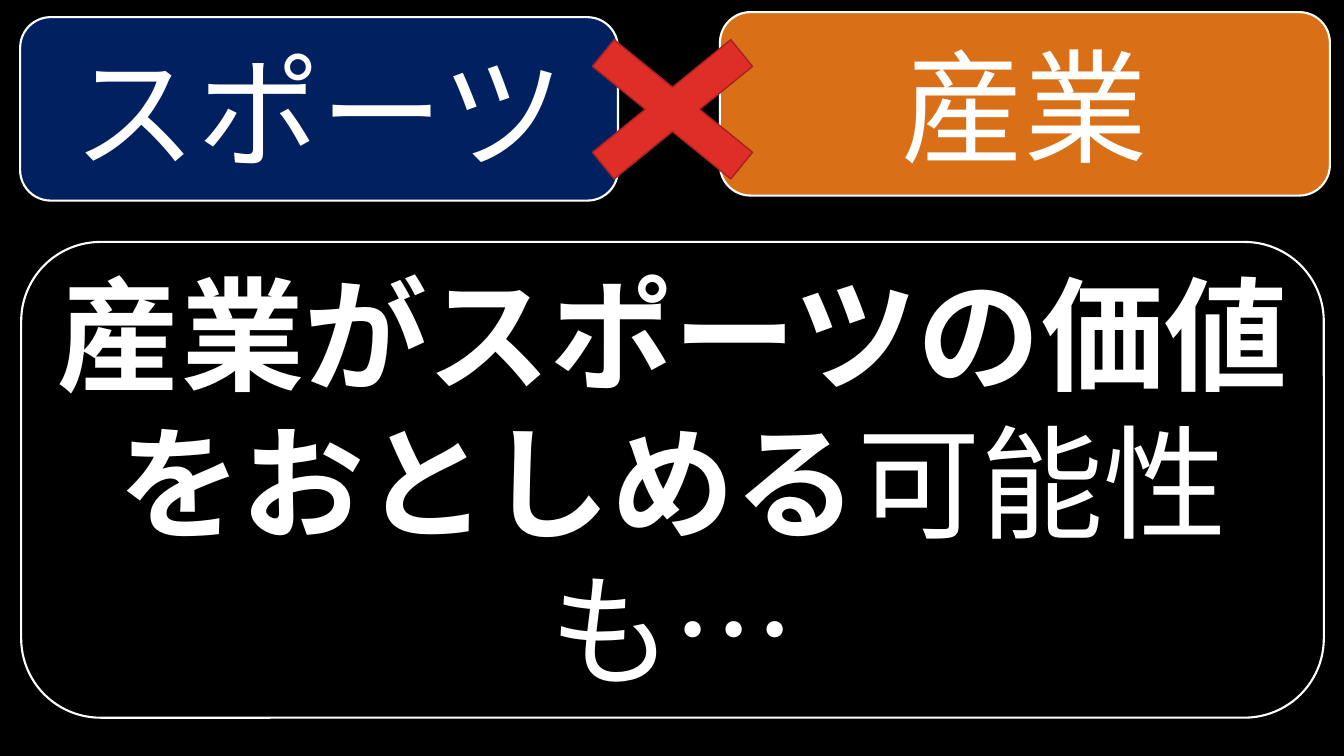
import pptx
import pptx.util
import pptx.dml.color
import pptx.enum.shapes
import pptx.enum.text

COLORS = {
    "black": "000000",
    "white": "FFFFFF",
    "navy": "002060",
    "orange": "D96F17",
    "red": "DF2E28",
    "dark_red": "A5221E",
}
FONT = "TeX Gyre Adventor"
WIDTH, HEIGHT = 13.33, 7.5
SHAPES = pptx.enum.shapes.MSO_SHAPE


def rgb(name):
    return pptx.dml.color.RGBColor.from_string(COLORS[name])


def add_outlined(s, kind, box, fill, line, weight):
    sp = s.shapes.add_shape(kind, *(pptx.util.Inches(v) for v in box))
    sp.shadow.inherit = False
    sp.fill.solid()
    sp.fill.fore_color.rgb = rgb(fill)
    sp.line.color.rgb = rgb(line)
    sp.line.width = pptx.util.Pt(weight)
    return sp


def add_panel(s, box, fill, runs):
    """Rounded panel; runs is a list of (text, bold) pairs."""
    sp = add_outlined(s, SHAPES.ROUNDED_RECTANGLE, box, fill, "white", 1.5)
    tf = sp.text_frame
    tf.word_wrap = True
    tf.vertical_anchor = pptx.enum.text.MSO_ANCHOR.MIDDLE
    p = tf.paragraphs[0]
    p.alignment = pptx.enum.text.PP_ALIGN.CENTER
    p.font.name = FONT
    p.font.size = pptx.util.Pt(88)
    p.font.color.rgb = rgb("white")
    for text, bold in runs:
        r = p.add_run()
        r.text = text
        r.font.name = FONT
        r.font.size = pptx.util.Pt(88)
        r.font.color.rgb = rgb("white")
        r.font.bold = bold


def add_pairing(s, box):
    """Two topics with a multiplication sign over the gap between them."""
    x, y, w, h = box
    panel_h = h - 0.05
    add_panel(s, (x, y + 0.05, 5.93, panel_h), "navy", [("スポーツ", False)])
    add_panel(s, (x + w - 6.05, y, 6.05, panel_h), "orange", [("産業", False)])
    cross = add_outlined(s, SHAPES.MATH_MULTIPLY, (x + 5.15, y - 0.11, 2.64, 2.15),
                         "red", "dark_red", 1)
    cross.adjustments[0] = 0.159


def add_message(s, box):
    add_panel(s, box, "black",
              [("産業がスポーツの価値をおとしめる", True), ("可能性も…", False)])


def main():
    prs = pptx.Presentation()
    prs.slide_width = pptx.util.Inches(WIDTH)
    prs.slide_height = pptx.util.Inches(HEIGHT)
    s = prs.slides.add_slide(prs.slide_layouts[6])
    s.background.fill.solid()
    s.background.fill.fore_color.rgb = rgb("black")
    add_pairing(s, (0.2, 0.12, 12.99, 1.87))
    add_message(s, (0.21, 2.4, 12.92, 4.72))
    prs.save("out.pptx")


if __name__ == "__main__":
    main()
